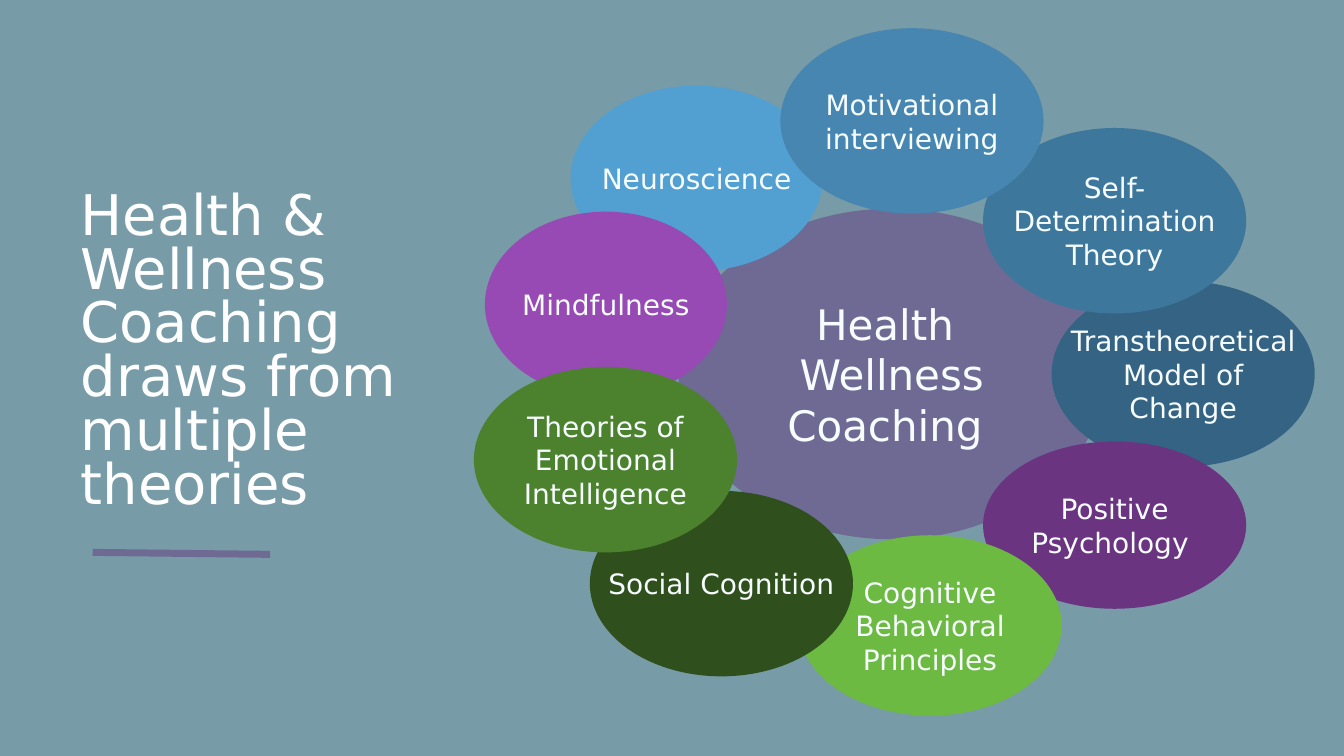
from lxml.etree import SubElement
from pptx import Presentation
from pptx.dml.color import RGBColor
from pptx.enum.shapes import MSO_CONNECTOR, MSO_SHAPE
from pptx.enum.text import MSO_ANCHOR, MSO_AUTO_SIZE, PP_ALIGN
from pptx.oxml.ns import qn
from pptx.util import Inches, Pt

FONT = "DejaVu Sans"
BACKGROUND = "789BA8"
PURPLE = "6E6A94"
LABEL_COLOR = "F7FDFF"
TITLE_COLOR = "FFFFFF"

THEORIES = [
    ("Transtheoretical Model of Change", 3, 2.4, (10.43, 2.79, 2.61, 1.84), "346383"),
    ("Neuroscience", 1, 2.4, (5.66, 0.85, 2.5, 1.84), "529FD1"),
    ("Self-Determination Theory", 3, 2.16, (9.75, 1.27, 2.61, 1.84), "3E779C"),
    ("Motivational interviewing", 2, 1.86, (7.74, 0.28, 2.61, 1.84), "4686B0"),
    ("Positive Psychology ", 2, 2.4, (9.75, 4.38, 2.61, 1.66), "6A3480"),
    ("Cognitive Behavioral Principles", 3, 2.4, (7.92, 5.31, 2.61, 1.79), "6DBA42"),
    ("Mindfulness", 1, 2.4, (4.81, 2.1, 2.4, 1.84), "9749B4"),
    ("Social Cognition", 1, 2.4, (5.85, 4.87, 2.61, 1.84), "2F501C"),
    ("Theories of Emotional Intelligence", 3, 2.4, (4.7, 3.64, 2.61, 1.84), "4C822E"),
]


def paint(color_format, color):
    color_format.rgb = RGBColor.from_string(color)


def format_text(shape, size, color, align, anchor, line_spacing=None):
    frame = shape.text_frame
    frame.word_wrap = True
    frame.auto_size = MSO_AUTO_SIZE.NONE
    frame.vertical_anchor = anchor
    frame.margin_left = frame.margin_right = Inches(0.03)
    frame.margin_top = frame.margin_bottom = Inches(0.03)
    for para in frame.paragraphs:
        para.alignment = align
        para.space_before = Pt(0)
        if line_spacing:
            para.line_spacing = line_spacing
        for span in para.runs:
            span.font.name = FONT
            span.font.size = Pt(size)
            paint(span.font.color, color)


def add_bubble(page, text, box, color, label_width, label_height, size):
    left, top, width, height = box
    group = page.shapes.add_group_shape()
    ellipse = group.shapes.add_shape(MSO_SHAPE.OVAL, *map(Inches, box))
    ellipse.shadow.inherit = False
    ellipse.fill.solid()
    paint(ellipse.fill.fore_color, color)
    ellipse.line.fill.background()
    label = group.shapes.add_textbox(
        Inches(left + (width - label_width) / 2),
        Inches(top + (height - label_height) / 2),
        Inches(label_width),
        Inches(label_height),
    )
    label.text_frame.text = text
    format_text(label, size, LABEL_COLOR, PP_ALIGN.CENTER, MSO_ANCHOR.MIDDLE)


def add_theory_wheel(page):
    add_bubble(page, "Health \vWellness Coaching ", (6.73, 2.07, 4.23, 3.28),
               PURPLE, 2.86, 1.99, 30)
    for text, lines, label_width, box, color in THEORIES:
        add_bubble(page, text, box, color, label_width, 0.05 + 0.35 * lines, 20)


def add_heading(page, left, top, width, height):
    title = page.shapes.title
    title.left, title.top = Inches(left), Inches(top)
    title.width, title.height = Inches(width), Inches(height)
    title.text_frame.text = "Health & Wellness Coaching\ndraws from multiple theories"
    format_text(title, 40, TITLE_COLOR, PP_ALIGN.LEFT, MSO_ANCHOR.TOP, 0.8)

    rule_left, rule_top = left + 0.15, top + height + 0.31
    rule = page.shapes.add_connector(
        MSO_CONNECTOR.STRAIGHT,
        Inches(rule_left), Inches(rule_top),
        Inches(rule_left + 1.76), Inches(rule_top + 0.02),
    )
    paint(rule.line.color, PURPLE)
    rule.line.width = Pt(5)
    SubElement(rule._element.spPr, qn("a:effectLst"))


def main():
    deck = Presentation()
    deck.slide_width, deck.slide_height = Inches(13.33), Inches(7.5)
    page = deck.slides.add_slide(deck.slide_layouts[5])
    page.background.fill.solid()
    paint(page.background.fill.fore_color, BACKGROUND)
    add_theory_wheel(page)
    add_heading(page, 0.77, 1.88, 3.93, 3.29)
    deck.save("out.pptx")


if __name__ == "__main__":
    main()
